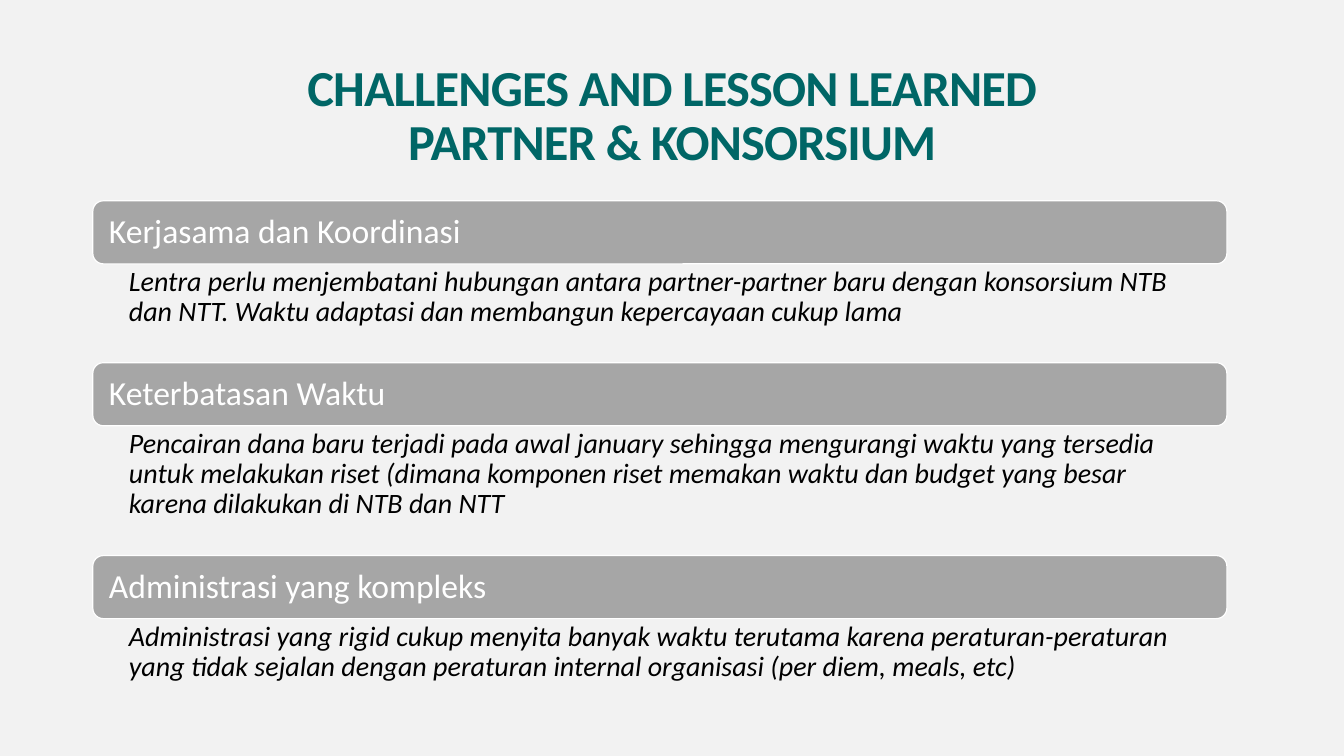
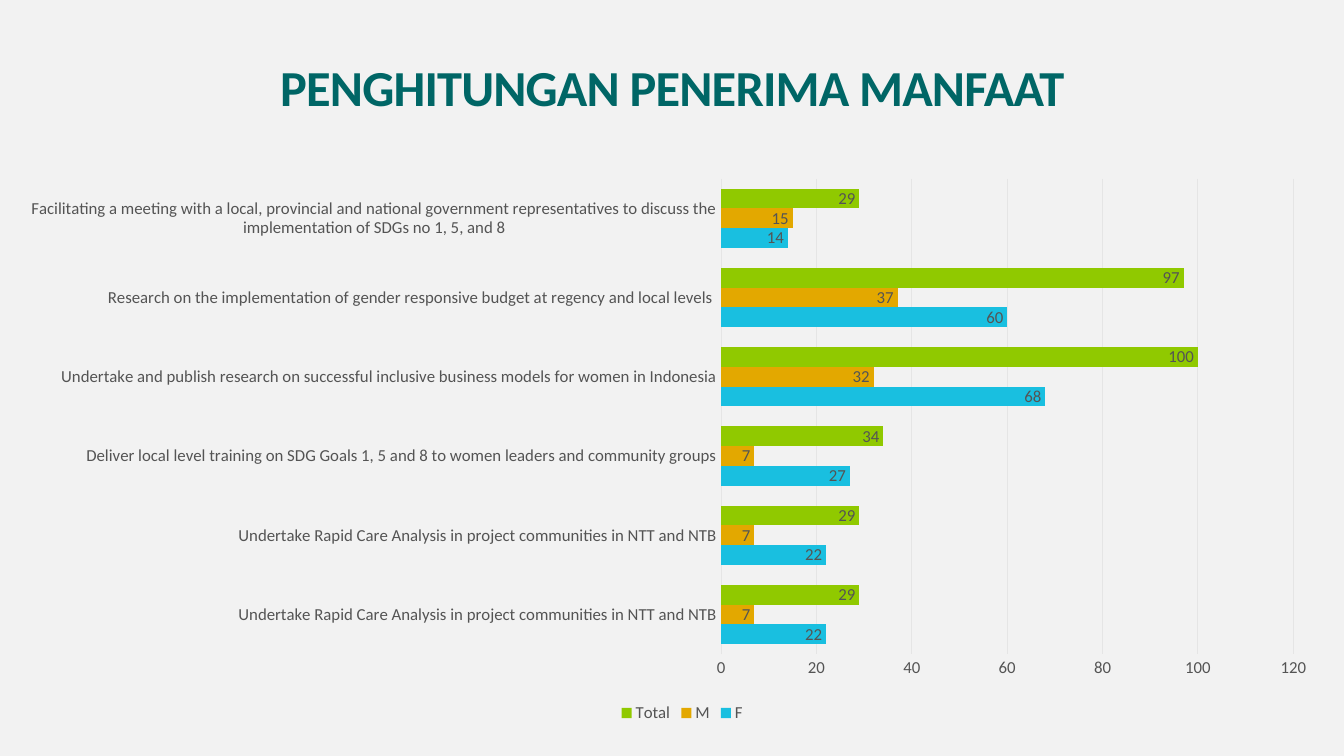
"""Build two slides on partner lessons and beneficiary counts."""
from dataclasses import dataclass

from lxml.etree import SubElement
from pptx import Presentation
from pptx.chart.data import CategoryChartData as Data
from pptx.dml.color import RGBColor as RGB
from pptx.enum.chart import XL_CHART_TYPE as Kind, XL_LABEL_POSITION as Spot
from pptx.enum.chart import XL_LEGEND_POSITION as Side, XL_TICK_MARK as Tick
from pptx.enum.shapes import MSO_SHAPE as Form
from pptx.enum.text import MSO_ANCHOR as Anchor, PP_ALIGN as Align
from pptx.oxml.ns import qn
from pptx.util import Cm, Pt


@dataclass(frozen=True)
class Theme:
    """Colours, font and type sizes."""
    font: str = "Calibri"
    back: str = "F2F2F2"
    title: str = "006666"
    bar: str = "A6A6A6"
    white: str = "FFFFFF"
    ink: str = "000000"
    label: str = "545454"
    grid: str = "E5E5E5"
    big: int = 36
    head: int = 24
    body: int = 20
    small: int = 12


T = Theme()

LESSONS = "CHALLENGES AND LESSON LEARNED\vPARTNER & KONSORSIUM"
POINTS = [
    ("Kerjasama dan Koordinasi",
     "Lentra perlu menjembatani hubungan antara partner-partner baru dengan "
     "konsorsium NTB dan NTT. Waktu adaptasi dan membangun kepercayaan cukup lama", 3),
    ("Keterbatasan Waktu",
     "Pencairan dana baru terjadi pada awal january sehingga mengurangi waktu yang "
     "tersedia untuk melakukan riset (dimana komponen riset memakan waktu dan budget "
     "yang besar karena dilakukan di NTB dan NTT", 4),
    ("Administrasi yang kompleks",
     "Administrasi yang rigid cukup menyita banyak waktu terutama karena "
     "peraturan-peraturan yang tidak sejalan dengan peraturan internal organisasi "
     "(per diem, meals, etc)", 2),
]

COUNTS = "PENGHITUNGAN PENERIMA MANFAAT"
CARE = " Undertake Rapid Care Analysis in project communities in NTT and NTB"
TASKS = [
    CARE,
    CARE,
    "Deliver local level training on SDG Goals 1, 5 and 8 to women leaders and "
    "community groups",
    "Undertake and publish research on successful inclusive business models for "
    "women in Indonesia",
    "Research on the implementation of gender responsive budget at regency and "
    "local levels ",
    "Facilitating a meeting with a local, provincial and national government "
    "representatives to discuss the implementation of SDGs no 1, 5, and 8",
]
SERIES = [
    ("F", "19BFE0", (22, 22, 27, 68, 60, 14)),
    ("M", "E3A800", (7, 7, 7, 32, 37, 15)),
    ("Total", "90C900", (29, 29, 34, 100, 97, 29)),
]
PLOT = {"x": 0.53, "y": 0.02, "w": 0.44, "h": 0.85}


def style(font, size, color, bold=False, italic=False):
    font.name, font.size = T.font, Pt(size)
    font.bold, font.italic = bold, italic
    font.color.rgb = RGB.from_string(color)


def write(shape, words, size, color, bold=False, italic=False, align=Align.LEFT,
          anchor=Anchor.TOP, track=0, inset=(0.25, 0.13, 0.25, 0.13)):
    frame = shape.text_frame
    frame.word_wrap, frame.vertical_anchor = True, anchor
    (frame.margin_left, frame.margin_top,
     frame.margin_right, frame.margin_bottom) = map(Cm, inset)
    para = frame.paragraphs[0]
    para.text, para.alignment, para.line_spacing = words, align, 0.9
    for run in para.runs:
        style(run.font, size, color, bold, italic)
        if track:
            run.font._element.set("spc", str(track))


def add_page(deck, title):
    page = deck.slides.add_slide(deck.slide_layouts[6])
    high = 0.25 + 1.39 * (title.count("\v") + 1)
    box = page.shapes.add_textbox(Cm(2.34), Cm(1.45), Cm(29.2), Cm(high))
    write(box, title, T.big, T.title, bold=True, align=Align.CENTER, track=-60)
    return page


def add_points(page):
    left, top, wide, tall = 2.34, 5.06, 28.58, 1.59
    for head, body, lines in POINTS:
        bar = page.shapes.add_shape(Form.ROUNDED_RECTANGLE, Cm(left), Cm(top),
                                    Cm(wide), Cm(tall))
        bar.shadow.inherit = False
        bar.fill.solid()
        bar.fill.fore_color.rgb = RGB.from_string(T.bar)
        bar.line.color.rgb = RGB.from_string(T.white)
        bar.line.width = Pt(0.85)
        write(bar, head, T.head, T.white, anchor=Anchor.MIDDLE,
              inset=(0.33, 0.25, 0.33, 0.25))
        top += tall
        deep = 0.15 + 0.78 * lines
        box = page.shapes.add_textbox(Cm(left), Cm(top), Cm(wide), Cm(deep))
        write(box, body, T.body, T.ink, italic=True, inset=(0.91, 0.08, 0.41, 0.08))
        top += deep


def place_plot(chart):
    area = chart._chartSpace.chart.plotArea
    for old in area.findall(qn("c:layout")):
        area.remove(old)
    frame = SubElement(area, qn("c:layout"))
    area.insert(0, frame)
    spot = SubElement(frame, qn("c:manualLayout"))
    parts = {"layoutTarget": "inner", "xMode": "edge", "yMode": "edge", **PLOT}
    for name, value in parts.items():
        SubElement(spot, qn(f"c:{name}")).set("val", str(value))


def add_counts(page):
    data = Data()
    data.categories = TASKS
    for name, _, values in SERIES:
        data.add_series(name, values)
    chart = page.shapes.add_chart(Kind.BAR_CLUSTERED, Cm(0.79), Cm(4.22), Cm(32.79),
                                  Cm(14.1), data).chart
    chart.has_title = False
    style(chart.font, T.small, T.label)
    chart.has_legend = True
    chart.legend.position, chart.legend.include_in_layout = Side.BOTTOM, False
    style(chart.legend.font, T.small, T.label)

    tasks, scale = chart.category_axis, chart.value_axis
    for axis in (tasks, scale):
        axis.major_tick_mark = axis.minor_tick_mark = Tick.NONE
        style(axis.tick_labels.font, T.small, T.label)
    scale.minimum_scale, scale.maximum_scale, scale.major_unit = 0, 120, 20
    scale.has_major_gridlines = True
    scale.format.line.fill.background()
    for line in (tasks.format.line, scale.major_gridlines.format.line):
        line.color.rgb, line.width = RGB.from_string(T.grid), Pt(0.75)

    plot = chart.plots[0]
    plot.gap_width, plot.overlap, plot.vary_by_categories = 100, 0, False
    for row, (_, color, _) in zip(plot.series, SERIES):
        row.invert_if_negative = False
        row.format.fill.solid()
        row.format.fill.fore_color.rgb = RGB.from_string(color)
        tags = row.data_labels
        tags.show_value, tags.position = True, Spot.INSIDE_END
        style(tags.font, T.small, T.label)
    place_plot(chart)


def main():
    deck = Presentation()
    deck.slide_width, deck.slide_height = Cm(33.87), Cm(19.05)
    fill = deck.slide_master.background.fill
    fill.solid()
    fill.fore_color.rgb = RGB.from_string(T.back)
    add_points(add_page(deck, LESSONS))
    add_counts(add_page(deck, COUNTS))
    deck.save("out.pptx")


if __name__ == "__main__":
    main()
